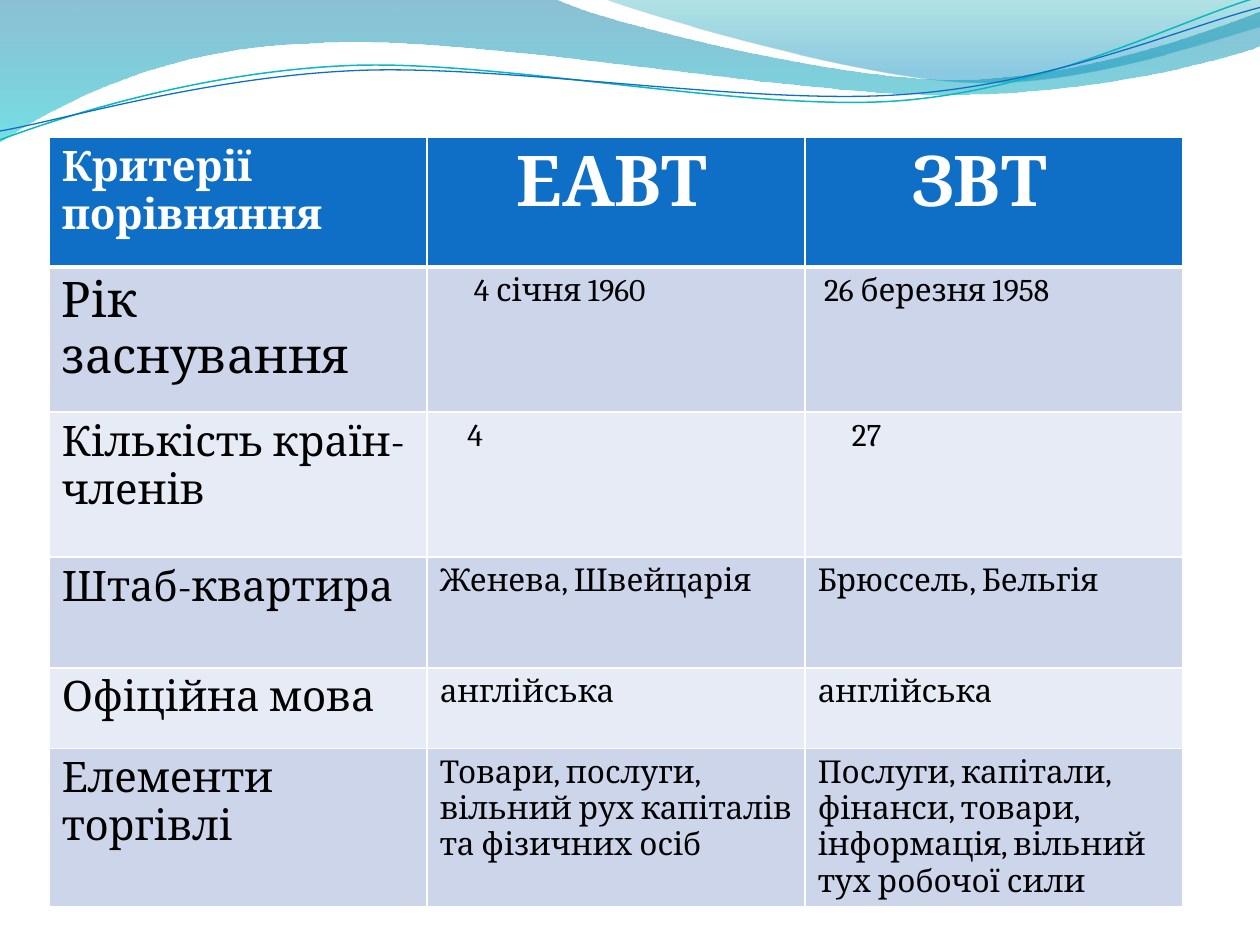
import math

import lxml.etree
import pptx
import pptx.dml.color
import pptx.oxml.ns
import pptx.util

Inches = pptx.util.Inches
Pt = pptx.util.Pt
qn = pptx.oxml.ns.qn

FONT = "Cambria"
COLORS = {
    "header": "0F6FC6", "band_dark": "CCD5EA", "band_light": "E7EBF5",
    "white": "FFFFFF", "black": "000000",
    "wave_top": "0074A1", "wave_bottom": "00C6CF",
    "crest_top": "00A1A9", "crest_bottom": "008BBF", "teal_line": "0AB8BF",
}
HEADER_SIZE, LABEL_SIZE, VALUE_SIZE = 40, 24, 18
LINE_ROTATION = 357.3

# Outlines: a pair is a straight step, six numbers are a cubic curve.
LARGE_WAVE = [
    (0, 0), (4.4, -0.01), (4.76, 0.17, 6.64, 0.63, 7.58, 0.63),
    (8.53, 0.63, 9.58, 0.26, 10, 0.09), (10.01, 0.36),
    (9.83, 0.44, 8.7, 0.76, 7.46, 0.75), (6.22, 0.75, 3.82, 0.28, 2.57, 0.34),
    (1.29, 0.36, 0.46, 0.83, -0.01, 1.13), (0, 0),
]
SMALL_WAVE = [
    (4.79, -0.01), (5.09, 0.11, 6.82, 0.62, 7.69, 0.65),
    (8.56, 0.69, 9.61, 0.32, 10, 0.21), (10, 0), (4.79, -0.01),
]
TEAL_LINE = [
    (0, 1.11), (0.48, 0.93, 1.58, 0.57, 2.77, 0.52),
    (3.95, 0.47, 5.93, 0.89, 7.13, 0.8), (8.33, 0.71, 9.38, 0.15, 9.98, -0.02),
]
BLUE_LINE = [
    (0, 1.04), (0.47, 0.96, 1.64, 0.61, 2.83, 0.56),
    (4.03, 0.51, 5.97, 0.84, 7.17, 0.75), (8.36, 0.67, 9.41, 0.21, 10, 0.06),
]

COLUMN_WIDTH = 3
# Row height, label size, value size, then (text, left indent) for each cell.
ROWS = [
    (1.03, LABEL_SIZE, HEADER_SIZE,
     [("Критерії порівняння", 0), ("ЕАВТ", 0.61), ("ЗВТ", 0.74)]),
    (1.15, 28, VALUE_SIZE,
     [("Рік заснування", 0), ("4 січня 1960", 0.27), ("26 березня 1958", 0.05)]),
    (1.15, LABEL_SIZE, VALUE_SIZE,
     [("Кількість країн-членів", 0), ("4", 0.22), ("27", 0.27)]),
    (0.88, LABEL_SIZE, VALUE_SIZE,
     [("Штаб-квартира", 0), ("Женева, Швейцарія", 0), ("Брюссель, Бельгія", 0)]),
    (0.64, LABEL_SIZE, VALUE_SIZE,
     [("Офіційна мова", 0), ("англійська", 0), ("англійська", 0)]),
    (1.15, LABEL_SIZE, VALUE_SIZE,
     [("Елементи торгівлі", 0),
      ("Товари, послуги, вільний рух капіталів та фізичних осіб", 0),
      ("Послуги, капітали, фінанси, товари, інформація, вільний тух робочої сили", 0)]),
]


def rgb(name):
    return pptx.dml.color.RGBColor.from_string(COLORS[name])


def turn(outline, center, degrees):
    """Turn every point of an outline clockwise about a center."""
    cosine, sine = math.cos(math.radians(degrees)), math.sin(math.radians(degrees))
    turned = []
    for step in outline:
        numbers = []
        for x, y in zip(step[::2], step[1::2]):
            across, down = x - center[0], y - center[1]
            numbers += [center[0] + across * cosine - down * sine,
                        center[1] + across * sine + down * cosine]
        turned.append(tuple(numbers))
    return turned


def add_outline(slide, outline, close):
    """Build a freeform, then join the three points of each curve step."""
    points = [(Inches(x), Inches(y)) for step in outline
              for x, y in zip(step[::2], step[1::2])]
    builder = slide.shapes.build_freeform(*points[0])
    builder.add_line_segments(points[1:], close=close)
    shape = builder.convert_to_shape()
    shape.shadow.inherit = False
    segments = iter(list(shape._element.iter(qn("a:lnTo"))))
    for step in outline[1:]:
        segment = next(segments)
        if len(step) == 6:
            curve = lxml.etree.Element(qn("a:cubicBezTo"))
            segment.addprevious(curve)
            for part in (segment, next(segments), next(segments)):
                curve.append(part[0])
                part.getparent().remove(part)
    return shape


def add_wave(slide, outline, stops):
    """Add a wave filled downwards; stops are (position, color, opacity %)."""
    shape = add_outline(slide, outline, close=True)
    shape.line.fill.background()
    shape.fill.gradient()
    shape.fill.gradient_angle = 270
    for stop, (position, color, opacity) in zip(shape.fill.gradient_stops, stops):
        stop.position = position
        stop.color.rgb = rgb(color)
    elements = shape.fill._xPr.iter(qn("a:srgbClr"))
    for element, (position, color, opacity) in zip(elements, stops):
        lxml.etree.SubElement(element, qn("a:alpha")).set("val", str(opacity * 1000))


def add_wave_line(slide, outline, center, color, width):
    level = turn(outline, center, -LINE_ROTATION)
    shape = add_outline(slide, level, close=False)
    shape.rotation = LINE_ROTATION
    shape.fill.background()
    shape.line.color.rgb = rgb(color)
    shape.line.width = Pt(width)


def set_borders(cell, top, bottom):
    properties = cell._tc.get_or_add_tcPr()
    for side, width in (("L", 1), ("R", 1), ("T", top), ("B", bottom)):
        line = lxml.etree.SubElement(properties, qn("a:ln" + side), w=str(Pt(width)))
        fill = lxml.etree.SubElement(line, qn("a:solidFill"))
        lxml.etree.SubElement(fill, qn("a:srgbClr"), val=COLORS["white"])


def fill_cell(cell, text, indent, size, fill, color, bold):
    cell.fill.solid()
    cell.fill.fore_color.rgb = rgb(fill)
    paragraph = cell.text_frame.paragraphs[0]
    if indent:
        paragraph._p.get_or_add_pPr().set("marL", str(Inches(indent)))
    run = paragraph.add_run()
    run.text = text
    run.font.name = FONT
    run.font.size = Pt(size)
    run.font.bold = bold
    run.font.color.rgb = rgb(color)


def add_comparison_table(slide):
    columns = len(ROWS[0][3])
    height = Inches(6.16)
    frame = slide.shapes.add_table(
        len(ROWS), columns, Inches(0.39), Inches(1.09),
        Inches(COLUMN_WIDTH * columns), height)
    table = frame.table
    for column in table.columns:
        column.width = Inches(COLUMN_WIDTH)
    for row, (row_height, label_size, value_size, texts) in enumerate(ROWS):
        table.rows[row].height = Inches(row_height)
        header = row == 0
        fill = "header" if header else ("band_light", "band_dark")[row % 2]
        for column, (text, indent) in enumerate(texts):
            cell = table.cell(row, column)
            set_borders(cell, top=3 if row == 1 else 1, bottom=3 if header else 1)
            fill_cell(cell, text, indent, value_size if column else label_size,
                      fill, "white" if header else "black", header)
    frame.height = height


def main():
    presentation = pptx.Presentation()
    presentation.slide_width = Inches(10)
    presentation.slide_height = Inches(7.5)
    slide = presentation.slides.add_slide(presentation.slide_layouts[6])
    add_wave(slide, LARGE_WAVE, [(0, "wave_top", 45), (1, "wave_bottom", 55)])
    add_wave(slide, SMALL_WAVE, [(0, "crest_top", 30), (0.8, "crest_bottom", 45)])
    add_wave_line(slide, TEAL_LINE, (4.99, 0.58), "teal_line", 0.85)
    add_wave_line(slide, BLUE_LINE, (5, 0.59), "header", 0.75)
    add_comparison_table(slide)
    presentation.save("out.pptx")


if __name__ == "__main__":
    main()
